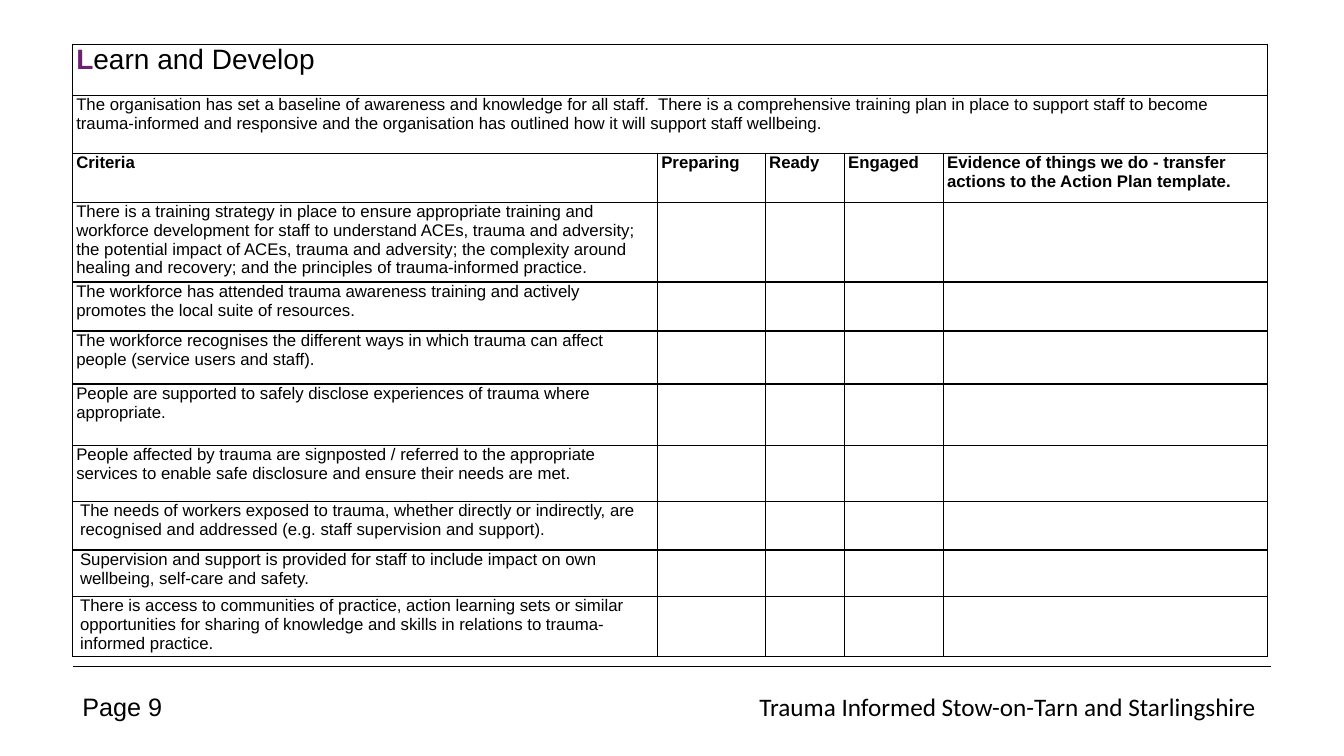
from lxml import etree
from pptx import Presentation
from pptx.dml.color import RGBColor
from pptx.enum.shapes import MSO_CONNECTOR
from pptx.enum.text import MSO_AUTO_SIZE, PP_ALIGN
from pptx.oxml import parse_xml
from pptx.oxml.ns import nsdecls, qn
from pptx.util import Pt

STRAIGHT = MSO_CONNECTOR.STRAIGHT
LEFT, RIGHT = PP_ALIGN.LEFT, PP_ALIGN.RIGHT
FIT_SHAPE = MSO_AUTO_SIZE.SHAPE_TO_FIT_TEXT
BLACK = RGBColor(0x00, 0x00, 0x00)
PURPLE = RGBColor(0x6F, 0x21, 0x71)

TABLE_LEFT, TABLE_TOP = 51.8, 31.6
COLUMN_WIDTHS = [417.9, 77.1, 56.4, 70.7, 231.4]
ROW_HEIGHTS = [36.4, 41.4, 35, 57.1, 35, 37.9, 43.6, 40, 35, 32.9, 42.9]
FIRST_CRITERION_ROW = 3
FIRST_INDENTED_ROW = 8

INTRODUCTION = (
    "The organisation has set a baseline of awareness and knowledge for all staff.  "
    "There is a comprehensive training plan in place to support staff to become "
    "trauma-informed and responsive and the organisation has outlined how it will "
    "support staff wellbeing."
)
HEADINGS = [
    "Criteria", "Preparing", "Ready", "Engaged",
    "Evidence of things we do - transfer actions to the Action Plan template.",
]
CRITERIA = [
    "There is a training strategy in place to ensure appropriate training and workforce "
    "development for staff to understand ACEs, trauma and adversity; the potential impact "
    "of ACEs, trauma and adversity; the complexity around healing and recovery; and the "
    "principles of trauma-informed practice.",
    "The workforce has attended trauma awareness training and actively promotes the local "
    "suite of resources.",
    "The workforce recognises the different ways in which trauma can affect people "
    "(service users and staff).",
    "People are supported to safely disclose experiences of trauma where appropriate.",
    "People affected by trauma are signposted / referred to the appropriate services to "
    "enable safe disclosure and ensure their needs are met.",
    "The needs of workers exposed to trauma, whether directly or indirectly, are recognised "
    "and addressed (e.g. staff supervision and support).",
    "Supervision and support is provided for staff to include impact on own wellbeing, "
    "self-care and safety.",
    "There is access to communities of practice, action learning sets or similar "
    "opportunities for sharing of knowledge and skills in relations to trauma-informed "
    "practice.",
]
FOOTERS = [
    ("Page 9", 51.8, 86.4, "Arial", LEFT),
    ("Trauma Informed Stow-on-Tarn and Starlingshire", 520.6, 383.4, "Calibri", RIGHT),
]


def add_text(para, text, size=12, font="Arial", bold=False, color=BLACK):
    span = para.add_run()
    span.text = text
    span.font.size = Pt(size)
    span.font.name = font
    span.font.bold = bold
    span.font.color.rgb = color


def add_borders(cell):
    properties = cell._tc.get_or_add_tcPr()
    for position, side in enumerate(["lnL", "lnR", "lnT", "lnB"]):
        border = parse_xml(
            f'<a:{side} {nsdecls("a")} w="{Pt(1)}"><a:solidFill>'
            f'<a:srgbClr val="{BLACK}"/></a:solidFill></a:{side}>'
        )
        properties.insert(position, border)


deck = Presentation()
deck.slide_width, deck.slide_height = Pt(960), Pt(540)
page = deck.slides.add_slide(deck.slide_layouts[6])

# Assessment table
frame = page.shapes.add_table(
    len(ROW_HEIGHTS), len(COLUMN_WIDTHS), Pt(TABLE_LEFT), Pt(TABLE_TOP),
    Pt(sum(COLUMN_WIDTHS)), Pt(sum(ROW_HEIGHTS)),
)
table = frame.table
table.first_row = False
table.horz_banding = False
for column, width in zip(table.columns, COLUMN_WIDTHS):
    column.width = Pt(width)
for row, height in zip(table.rows, ROW_HEIGHTS):
    row.height = Pt(height)

for row_number, row in enumerate(table.rows):
    inset = Pt(5.4 if row_number >= FIRST_INDENTED_ROW else 2.7)
    for cell in row.cells:
        cell.fill.background()
        cell.margin_left = cell.margin_right = inset
        cell.margin_top = cell.margin_bottom = 0
        cell.text_frame.paragraphs[0].font.size = Pt(12)
        add_borders(cell)

last_column = len(COLUMN_WIDTHS) - 1
for row_number in range(2):
    table.cell(row_number, 0).merge(table.cell(row_number, last_column))

title = table.cell(0, 0).text_frame.paragraphs[0]
add_text(title, "L", size=20, bold=True, color=PURPLE)
add_text(title, "earn and Develop", size=20)
add_text(table.cell(1, 0).text_frame.paragraphs[0], INTRODUCTION)
for column_number, heading in enumerate(HEADINGS):
    add_text(table.cell(2, column_number).text_frame.paragraphs[0], heading, bold=True)
for row_number, criterion in enumerate(CRITERIA, FIRST_CRITERION_ROW):
    add_text(table.cell(row_number, 0).text_frame.paragraphs[0], criterion)

# Footer
rule = page.shapes.add_connector(STRAIGHT, Pt(51.8), Pt(475.9), Pt(907.9), Pt(475.9))
rule.line.color.rgb = BLACK
rule.line.width = Pt(0.5)
etree.SubElement(rule._element.spPr, qn("a:effectLst"))

for text, left, width, font, alignment in FOOTERS:
    box = page.shapes.add_textbox(Pt(left), Pt(490.3), Pt(width), Pt(29))
    box.text_frame.word_wrap = True
    box.text_frame.auto_size = FIT_SHAPE
    para = box.text_frame.paragraphs[0]
    para.alignment = alignment
    add_text(para, text, size=18, font=font)

deck.save("out.pptx")
